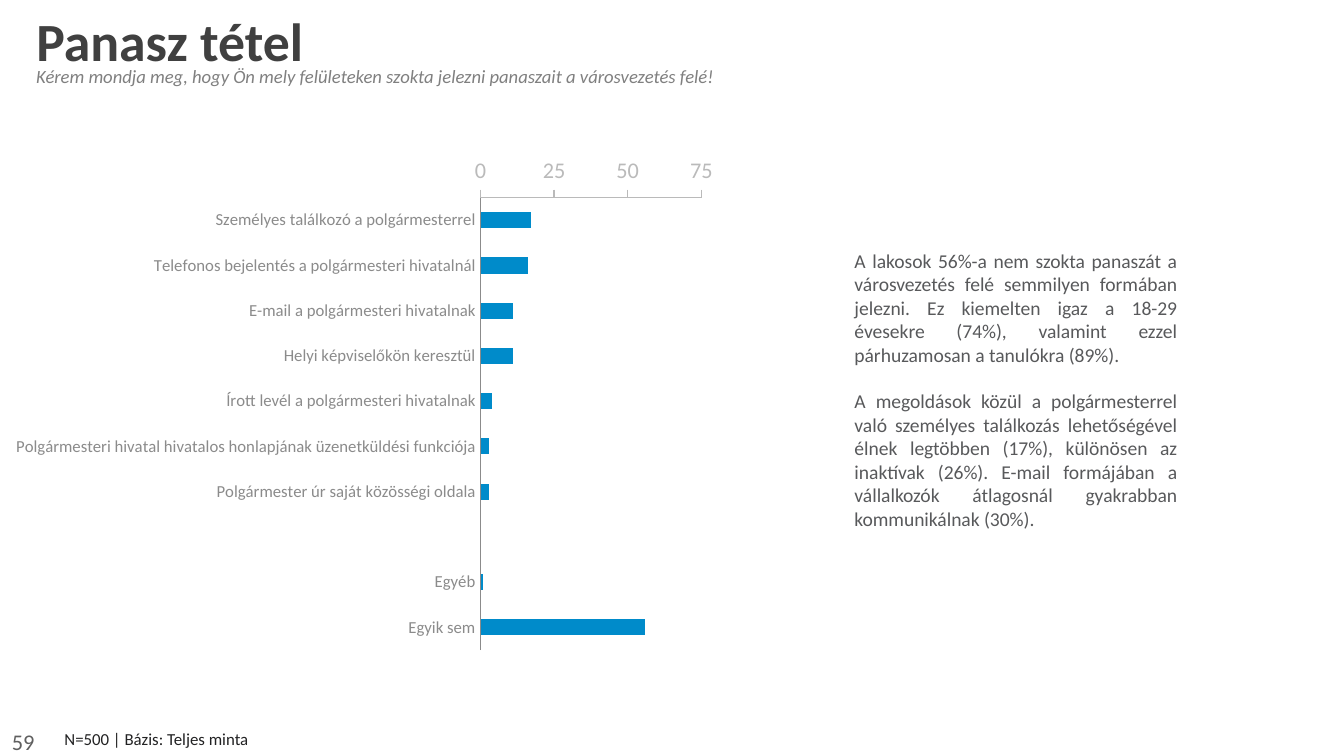
from lxml import etree
from pptx import Presentation
from pptx.chart.data import CategoryChartData
from pptx.dml.color import RGBColor
from pptx.enum.chart import XL_CHART_TYPE, XL_TICK_MARK
from pptx.enum.text import MSO_ANCHOR, PP_ALIGN
from pptx.oxml.ns import qn
from pptx.util import Inches, Pt

FACE = "Calibri"

# text, (left, top, width, height), (left and right, top and bottom) inset, format
TEXTS = [
    (["59"], (-0.01, 5.37, 2.33, 0.3), (0.1, 0.05),
     dict(size=12, color="5F5F5F", anchor=MSO_ANCHOR.MIDDLE)),
    (["Kérem mondja meg, hogy Ön mely felületeken szokta jelezni panaszait "
      "a városvezetés felé!"], (0.23, 0.47, 9.5, 0.24), (0.04, 0.01),
     dict(size=10, color="808080", italic=True)),
    (["Panasz tétel"], (0.23, 0.01, 9.49, 0.51), (0.04, 0.05),
     dict(size=28.8, color="404040", bold=True)),
    (["N=500 | Bázis: Teljes minta"], (0.48, 5.42, 5.26, 0.45), (0, 0),
     dict(size=9, color="222223")),
    (["A lakosok 56%-a nem szokta panaszát a városvezetés felé semmilyen "
      "formában jelezni. Ez kiemelten igaz a 18-29 évesekre (74%), valamint "
      "ezzel párhuzamosan a tanulókra (89%).",
      "A megoldások közül a polgármesterrel való személyes találkozás "
      "lehetőségével élnek legtöbben (17%), különösen az inaktívak (26%). "
      "E-mail formájában a vállalkozók átlagosnál gyakrabban kommunikálnak "
      "(30%)."], (6.26, 1.8, 2.6, 2.22), (0.1, 0.05),
     dict(size=10.5, color="58595B", align=PP_ALIGN.JUSTIFY, gap=12.5)),
]

ANSWERS = [
    ("Személyes találkozó a polgármesterrel", 17),
    ("Telefonos bejelentés a polgármesteri hivatalnál", 16),
    ("E-mail a polgármesteri hivatalnak", 11),
    ("Helyi képviselőkön keresztül", 11),
    ("Írott levél a polgármesteri hivatalnak", 4),
    ("Polgármesteri hivatal hivatalos honlapjának üzenetküldési funkciója", 3),
    ("Polgármester úr saját közösségi oldala", 3),
    ("", None),
    ("Egyéb", 1),
    ("Egyik sem", 56),
]
CHART = (0.12, 0.64, 5.51, 4.35)
PLOT = dict(x=0.625, y=0.191, w=0.3, h=0.774)


def rgb(code):
    return RGBColor.from_string(code)


def style(font, size, color, **more):
    for key, value in dict(name=FACE, size=Pt(size), **more).items():
        setattr(font, key, value)
    font.color.rgb = rgb(color)


def add_text(slide, lines, place, inset, form):
    form = dict(form)
    frame = slide.shapes.add_textbox(*map(Inches, place)).text_frame
    side, edge = map(Inches, inset)
    layout = dict(word_wrap=True, margin_left=side, margin_right=side,
                  margin_top=edge, margin_bottom=edge,
                  vertical_anchor=form.pop("anchor", MSO_ANCHOR.TOP))
    for key, value in layout.items():
        setattr(frame, key, value)
    align, gap = form.pop("align", PP_ALIGN.LEFT), form.pop("gap", 0)
    for i, line in enumerate(lines):
        para = frame.add_paragraph() if i else frame.paragraphs[0]
        para.alignment = align
        if i:
            para.space_before = Pt(gap)
        run = para.add_run()
        run.text = line
        style(run.font, **form)


def style_axis(axis, size, color, **form):
    common = dict(has_major_gridlines=False, minor_tick_mark=XL_TICK_MARK.NONE)
    for key, value in {**common, **form}.items():
        setattr(axis, key, value)
    style(axis.tick_labels.font, size, color)
    axis.format.line.color.rgb = rgb(color)
    axis.format.line.width = Pt(0.75)


def fix_plot(chart):
    """Pin the inner plot area to the fractions in PLOT."""
    area = chart.plots[0]._element.getparent()
    for old in area.findall(qn("c:layout")):
        area.remove(old)
    layout = etree.Element(qn("c:layout"))
    manual = etree.SubElement(layout, qn("c:manualLayout"))
    parts = dict(layoutTarget="inner", xMode="edge", yMode="edge", **PLOT)
    for tag, value in parts.items():
        etree.SubElement(manual, qn("c:" + tag)).set("val", str(value))
    area.insert(0, layout)


def add_bars(slide):
    data = CategoryChartData(number_format="0")
    data.categories = [name for name, _ in ANSWERS]
    data.add_series("Series 1", [value for _, value in ANSWERS])
    chart = slide.shapes.add_chart(
        XL_CHART_TYPE.BAR_CLUSTERED, *map(Inches, CHART), data).chart
    chart.has_legend = chart.has_title = False
    style(chart.font, 10, "003399")
    plot = chart.plots[0]
    plot.gap_width, plot.vary_by_categories = 182, False
    fill = plot.series[0].format.fill
    fill.solid()
    fill.fore_color.rgb = rgb("008BCA")
    style_axis(chart.category_axis, 9, "8B8B8B", reverse_order=True,
               major_tick_mark=XL_TICK_MARK.NONE)
    chart.category_axis.tick_labels.offset = 0
    style_axis(chart.value_axis, 12, "BABABA", minimum_scale=0,
               maximum_scale=75, major_unit=25,
               major_tick_mark=XL_TICK_MARK.OUTSIDE)
    labels = chart.value_axis.tick_labels
    labels.number_format, labels.number_format_is_linked = "0", False
    fix_plot(chart)


def main():
    deck = Presentation()
    deck.slide_width = Inches(10)
    deck.slide_height = deck.slide_width * 9 // 16
    slide = deck.slides.add_slide(deck.slide_layouts[6])
    add_bars(slide)
    for item in TEXTS:
        add_text(slide, *item)
    deck.save("out.pptx")


if __name__ == "__main__":
    main()
